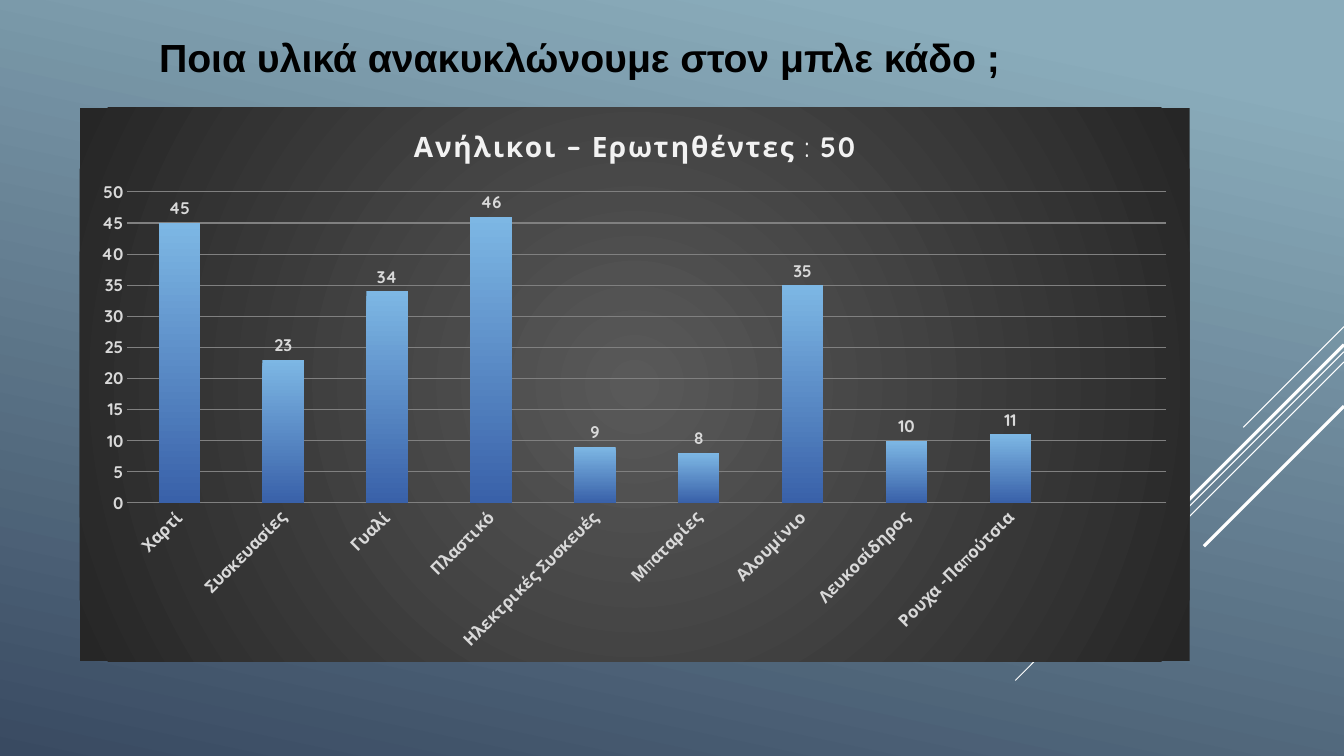
from dataclasses import dataclass

from lxml.etree import SubElement
from pptx import Presentation
from pptx.chart.data import CategoryChartData
from pptx.dml.color import RGBColor
from pptx.enum.chart import XL_CHART_TYPE as ChartType
from pptx.enum.chart import XL_LABEL_POSITION as LabelPosition
from pptx.enum.chart import XL_TICK_MARK as TickMark
from pptx.enum.shapes import MSO_CONNECTOR as Connector
from pptx.enum.text import MSO_AUTO_SIZE as AutoSize
from pptx.oxml import parse_xml
from pptx.oxml.ns import nsdecls, qn
from pptx.util import Inches, Pt


@dataclass(frozen=True)
class Theme:
    black: str = "000000"
    white: str = "FFFFFF"
    chart_title: str = "F2F2F2"
    chart_text: str = "D9D9D9"
    gridline: str = "808080"
    background: tuple = ((0.1, "8AACBB"), (1, "394A61"))
    bars: tuple = ((0, "7DB7E4"), (1, "3961A9"))
    panel: tuple = ((0, "595959"), (1, "262626"))
    heading_font: str = "Arial"
    chart_font: str = "Quicksand"
    heading_size: float = 28
    chart_title_size: float = 20
    label_size: float = 12
    base_size: float = 10
    thin: float = 0.75
    thick: float = 2.25


class SlideBuilder:
    def __init__(self, presentation, theme):
        self.presentation = presentation
        self.theme = theme
        self.slide = presentation.slides.add_slide(presentation.slide_layouts[6])

    def x(self, percent):
        return round(self.presentation.slide_width * percent / 100)

    def y(self, percent):
        return round(self.presentation.slide_height * percent / 100)

    def box(self, left, top, width, height):
        return self.x(left), self.y(top), self.x(width), self.y(height)

    def style_font(self, font, name, size, color, bold=True):
        font.name = name
        font.size = Pt(size)
        font.bold = bold
        font.color.rgb = RGBColor.from_string(color)

    def gradient(self, fill, stops, clockwise_angle):
        fill.gradient()
        fill.gradient_angle = 360 - clockwise_angle
        for stop, (position, color) in zip(fill.gradient_stops, stops):
            stop.position = position
            stop.color.rgb = RGBColor.from_string(color)

    def background(self):
        self.gradient(self.slide.background.fill, self.theme.background, 102)

    def diagonal(self, top, drop, weight):
        run = drop * self.presentation.slide_height / self.presentation.slide_width
        line = self.slide.shapes.add_connector(
            Connector.STRAIGHT, self.x(100), self.y(top), self.x(100 - run), self.y(top + drop)
        )
        line.line.color.rgb = RGBColor.from_string(self.theme.white)
        line.line.width = Pt(weight)
        SubElement(line.element.spPr, qn("a:effectLst"))

    def heading(self, text, *area):
        frame = self.slide.shapes.add_textbox(*self.box(*area)).text_frame
        frame.word_wrap = False
        frame.auto_size = AutoSize.SHAPE_TO_FIT_TEXT
        run = frame.paragraphs[0].add_run()
        run.text = text
        self.style_font(run.font, self.theme.heading_font, self.theme.heading_size, self.theme.black)

    def column_chart(self, title, categories, values, *area):
        theme = self.theme
        data = CategoryChartData()
        data.categories = categories
        data.add_series("Series 1", values)
        chart = self.slide.shapes.add_chart(
            ChartType.COLUMN_CLUSTERED, *self.box(*area), data
        ).chart
        self.style_font(chart.font, theme.chart_font, theme.base_size, theme.white)
        chart.has_legend = False
        self.chart_title(chart, title)
        self.axes(chart)
        self.columns(chart.plots[0])
        self.panel(chart)

    def chart_title(self, chart, runs):
        chart.has_title = True
        paragraph = chart.chart_title.text_frame.paragraphs[0]
        for text, bold in runs:
            run = paragraph.add_run()
            run.text = text
            self.style_font(
                run.font, self.theme.chart_font, self.theme.chart_title_size,
                self.theme.chart_title, bold,
            )
            run.font._element.set("spc", "100")
        chart.chart_title.include_in_layout = False

    def axes(self, chart):
        theme = self.theme
        for axis in (chart.category_axis, chart.value_axis):
            axis.major_tick_mark = axis.minor_tick_mark = TickMark.NONE
            axis.format.line.fill.background()
            self.style_font(
                axis.tick_labels.font, theme.chart_font, theme.label_size, theme.chart_text
            )
        value_axis = chart.value_axis
        value_axis.minimum_scale, value_axis.maximum_scale = 0, 50
        value_axis.major_unit = 5
        gridline = value_axis.major_gridlines.format.line
        gridline.color.rgb = RGBColor.from_string(theme.gridline)
        gridline.width = Pt(theme.thin)
        chart.element.xpath(".//c:catAx/c:txPr/a:bodyPr")[0].set("rot", "-2700000")

    def columns(self, plot):
        theme = self.theme
        plot.vary_by_categories = False
        plot.gap_width = 150
        series = plot.series[0]
        self.gradient(series.format.fill, theme.bars, 90)
        labels = series.data_labels
        labels.show_value = True
        labels.position = LabelPosition.OUTSIDE_END
        self.style_font(labels.font, theme.chart_font, theme.label_size, theme.chart_text)

    def panel(self, chart):
        stops = "".join(
            f'<a:gs pos="{position * 100000}"><a:srgbClr val="{color}"/></a:gs>'
            for position, color in self.theme.panel
        )
        chart.element.find(qn("c:chart")).addnext(parse_xml(
            f'<c:spPr {nsdecls("c", "a")}><a:gradFill><a:gsLst>{stops}</a:gsLst>'
            '<a:path path="circle"><a:fillToRect l="50000" t="50000" r="50000" b="50000"/>'
            "</a:path></a:gradFill><a:ln><a:noFill/></a:ln></c:spPr>"
        ))
        plot_area = chart.element.xpath(".//c:plotArea")[0]
        for layout in plot_area.findall(qn("c:layout")):
            plot_area.remove(layout)
        settings = (
            ("layoutTarget", "inner"), ("xMode", "edge"), ("yMode", "edge"),
            ("x", 0.043), ("y", 0.152), ("w", 0.936), ("h", 0.562),
        )
        content = "".join(f'<c:{name} val="{value}"/>' for name, value in settings)
        plot_area.insert(0, parse_xml(
            f'<c:layout {nsdecls("c")}><c:manualLayout>{content}</c:manualLayout></c:layout>'
        ))


def main():
    presentation = Presentation()
    presentation.slide_width = Inches(40 / 3)
    presentation.slide_height = Inches(7.5)
    theme = Theme()
    builder = SlideBuilder(presentation, theme)
    builder.background()
    for top, drop, weight in (
        (43.2, 13.33, theme.thin),
        (46.53, 43.47, theme.thin),
        (47.87, 27.6, theme.thin),
        (45.6, 25.47, theme.thick),
        (53.73, 18.53, theme.thick),
    ):
        builder.diagonal(top, drop, weight)
    builder.heading("Ποια υλικά ανακυκλώνουμε στον μπλε κάδο ;", 11.1, 3.73, 64.8, 7.6)
    builder.column_chart(
        (("Ανήλικοι – Ερωτηθέντες", True), (" : ", False), ("50", True)),
        ("Χαρτί", "Συσκευασίες", "Γυαλί", "Πλαστικό", "Ηλεκτρικές Συσκευές",
         "Μπαταρίες", "Αλουμίνιο", "Λευκοσίδηρος", "Ρουχα -Παπούτσια", ""),
        (45, 23, 34, 46, 9, 8, 35, 10, 11, None),
        5.93, 14.27, 82.58, 73.2,
    )
    presentation.save("out.pptx")


if __name__ == "__main__":
    main()
